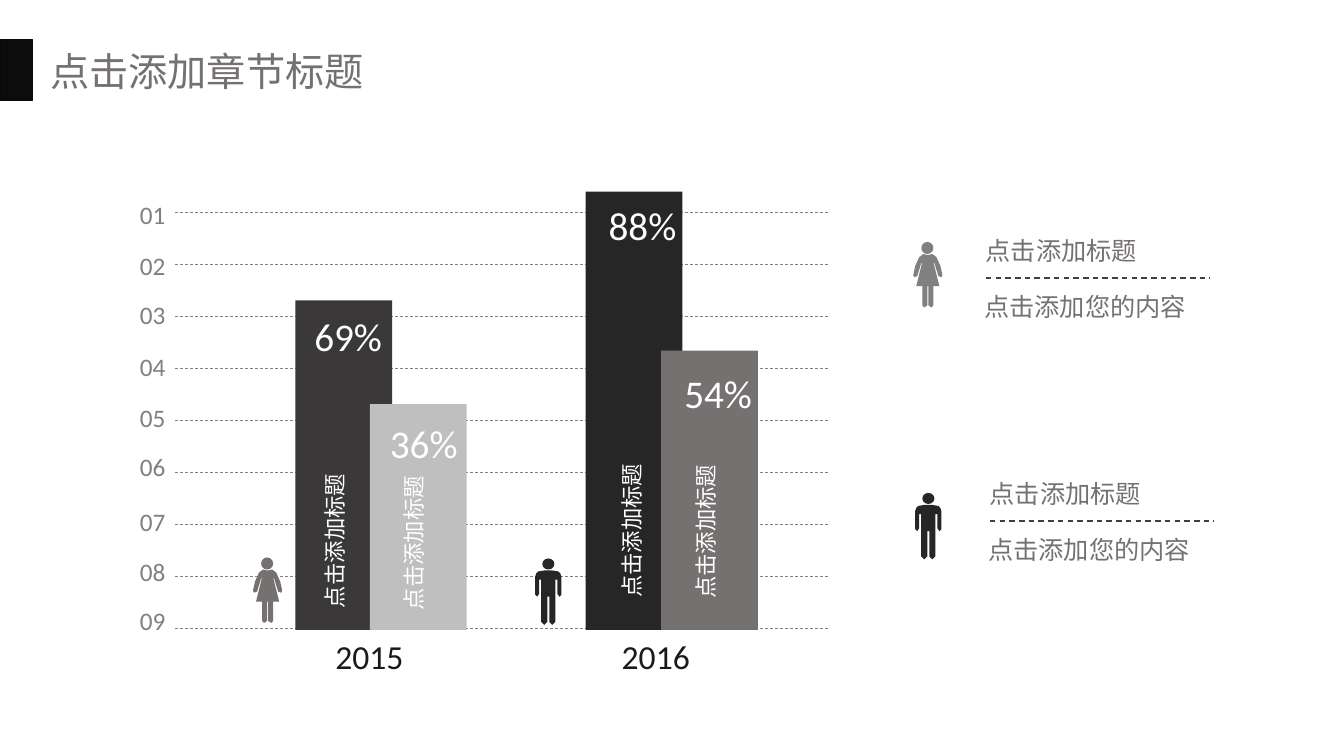
from lxml import etree
from pptx import Presentation
from pptx.dml.color import RGBColor
from pptx.enum.dml import MSO_LINE
from pptx.enum.shapes import MSO_CONNECTOR, MSO_SHAPE
from pptx.enum.text import MSO_ANCHOR, MSO_AUTO_SIZE, PP_ALIGN
from pptx.oxml.ns import qn
from pptx.util import Pt

PX = 9144  # EMU in one px, 100 px to the inch
DASH = MSO_LINE.DASH
STRAIGHT = MSO_CONNECTOR.STRAIGHT
RECTANGLE, OVAL = MSO_SHAPE.RECTANGLE, MSO_SHAPE.OVAL
LEFT, CENTER = PP_ALIGN.LEFT, PP_ALIGN.CENTER
MIDDLE, TOP = MSO_ANCHOR.MIDDLE, MSO_ANCHOR.TOP
FIT_SHAPE, NO_FIT = MSO_AUTO_SIZE.SHAPE_TO_FIT_TEXT, MSO_AUTO_SIZE.NONE

WHITE = RGBColor(0xFF, 0xFF, 0xFF)
BLACK = RGBColor(0x0C, 0x0C, 0x0C)
EDGE = RGBColor(0x09, 0x09, 0x09)
INK = RGBColor(0x1A, 0x1A, 0x1A)
CHARCOAL = RGBColor(0x26, 0x26, 0x26)
GRAPHITE = RGBColor(0x3A, 0x38, 0x38)
RULE = RGBColor(0x40, 0x40, 0x40)
TAUPE = RGBColor(0x76, 0x71, 0x71)
GRAY = RGBColor(0x80, 0x80, 0x80)
SILVER = RGBColor(0xBF, 0xBF, 0xBF)
HAN, LATIN, SIDE = "Noto Sans CJK SC", "Calibri", "Arial"

# Content
TITLE = "点击添加章节标题"
BAR_LABEL = "点击添加标题"
# value, colour, bar left and top, value left and top, label left and top
BARS = [
    ("69%", GRAPHITE, (293, 298), (302, 305), (252, 514)),
    ("36%", SILVER, (367, 401), (377, 411), (330, 516)),
    ("88%", CHARCOAL, (581, 190), (594, 195), (546, 504)),
    ("54%", TAUPE, (656, 348), (669, 361), (620, 505)),
]
YEARS = [("2015", 323), ("2016", 607)]
SCALE_TOPS = [193, 243, 292, 344, 394, 443, 497, 547, 596]
LEGENDS = [
    ("点击添加标题", "点击添加您的内容", 968, 229),
    ("点击添加标题", "点击添加您的内容", 972, 470),
]
# Figures: width, head box, left half of the body outline
WOMAN = (29, (8, 0, 12, 12), [
    (14, 13), (10, 12), (6, 15), (2, 24), (0, 33), (1, 35), (4, 34), (8, 21),
    (9, 20), (3, 44), (9, 44), (9, 63), (11, 65), (14, 63), (14, 44)])
MAN = (26, (7, 0, 12, 11), [
    (13, 12), (9, 12), (3, 13), (1, 15), (0, 18), (0, 36), (2, 38), (4, 35),
    (4, 21), (6, 21), (6, 63), (9, 66), (12, 63), (12, 38), (13, 38)])
FIGURES = [
    (WOMAN, TAUPE, 251, 553), (MAN, CHARCOAL, 531, 554),
    (WOMAN, GRAY, 906, 240), (MAN, CHARCOAL, 908, 489),
]
GRID_LEFT, GRID_RIGHT, GRID_TOP, GRID_BOTTOM = 174, 821, 211, 623
BAR_WIDTH, BAR_BASE = 96, 625
SCALE_WIDTH, VALUE_WIDTH, YEAR_WIDTH = 48, 92, 96  # room to stay on one line


def emu(*lengths):
    return [round(length * PX) for length in lengths]


def write(frame, text, size, font, color, align=LEFT):
    para = frame.paragraphs[0]
    para.alignment = align
    span = para.add_run()
    span.text = text
    span.font.size = Pt(size)
    span.font.name = font
    span.font.color.rgb = color
    east = etree.SubElement(span.font._element, qn("a:ea"))
    east.set("typeface", HAN)


def add_text(page, place, text, size, font, color, align=LEFT, fit=NO_FIT):
    box = page.shapes.add_textbox(*emu(*place))
    frame = box.text_frame
    frame.word_wrap = True
    frame.auto_size = fit
    frame.vertical_anchor = TOP
    write(frame, text, size, font, color, align)
    return box


def paint(shape, color):
    shape.shadow.inherit = False
    shape.fill.solid()
    shape.fill.fore_color.rgb = color
    shape.line.fill.background()
    return shape


def add_block(page, kind, place, color):
    return paint(page.shapes.add_shape(kind, *emu(*place)), color)


def add_dashes(page, left, right, y, color, width):
    line = page.shapes.add_connector(STRAIGHT, *emu(left, y, right, y))
    line.line.color.rgb = color
    line.line.width = Pt(width)
    line.line.dash_style = DASH
    etree.SubElement(line._element.spPr, qn("a:effectLst"))


def add_figure(page, figure, color, left, top):
    width, (x, y, head_width, head_height), half = figure
    add_block(page, OVAL, (left + x, top + y, head_width, head_height), color)
    outline = half + [(width - x, y) for x, y in reversed(half)]
    points = [(left + x, top + y) for x, y in outline]
    builder = page.shapes.build_freeform(*points[0], scale=PX)
    builder.add_line_segments(points[1:], close=True)
    paint(builder.convert_to_shape(), color)


def main():
    deck = Presentation()
    deck.slide_width, deck.slide_height = 12192000, 6858000
    page = deck.slides.add_slide(deck.slide_layouts[5])

    # Heading
    marker = add_block(page, RECTANGLE, (0, 39, 32, 61), BLACK)
    marker.line.color.rgb = EDGE
    marker.line.width = Pt(1)
    title = page.shapes.title
    title.left, title.top, title.width, title.height = emu(40, 42, 400, 57)
    title.text_frame.auto_size = NO_FIT
    title.text_frame.vertical_anchor = MIDDLE
    write(title.text_frame, TITLE, 28, HAN, TAUPE)

    # Grid lines and scale
    step = (GRID_BOTTOM - GRID_TOP) / (len(SCALE_TOPS) - 1)
    for row, label_top in enumerate(SCALE_TOPS):
        add_dashes(page, GRID_LEFT, GRID_RIGHT, GRID_TOP + row * step, GRAY, 0.5)
        add_text(page, (129, label_top, SCALE_WIDTH, 40), f"{row + 1:02}", 18, LATIN, GRAY)

    # Bars with values and upright labels
    for value, color, (left, top), value_at, label_at in BARS:
        add_block(page, RECTANGLE, (left, top, BAR_WIDTH, BAR_BASE - top), color)
        add_text(page, (*value_at, VALUE_WIDTH, 57), value, 28, LATIN, WHITE)
        label = add_text(page, (*label_at, 171, 27), BAR_LABEL, 16, SIDE, WHITE, fit=FIT_SHAPE)
        label.text_frame.paragraphs[0].line_spacing = Pt(12)
        label.rotation = 270
    for year, left in YEARS:
        add_text(page, (left, 626, YEAR_WIDTH, 50), year, 24, LATIN, INK)

    # Figures
    for figure in FIGURES:
        add_figure(page, *figure)

    # Legend
    for heading, detail, left, top in LEGENDS:
        add_text(page, (left, top, 180, 40), heading, 18, HAN, TAUPE)
        add_text(page, (left - 15, top + 55, 247, 40), detail, 18, HAN, TAUPE, CENTER)
        add_dashes(page, left + 10, left + 232, top + 47, RULE, 1)

    deck.save("out.pptx")


if __name__ == "__main__":
    main()
